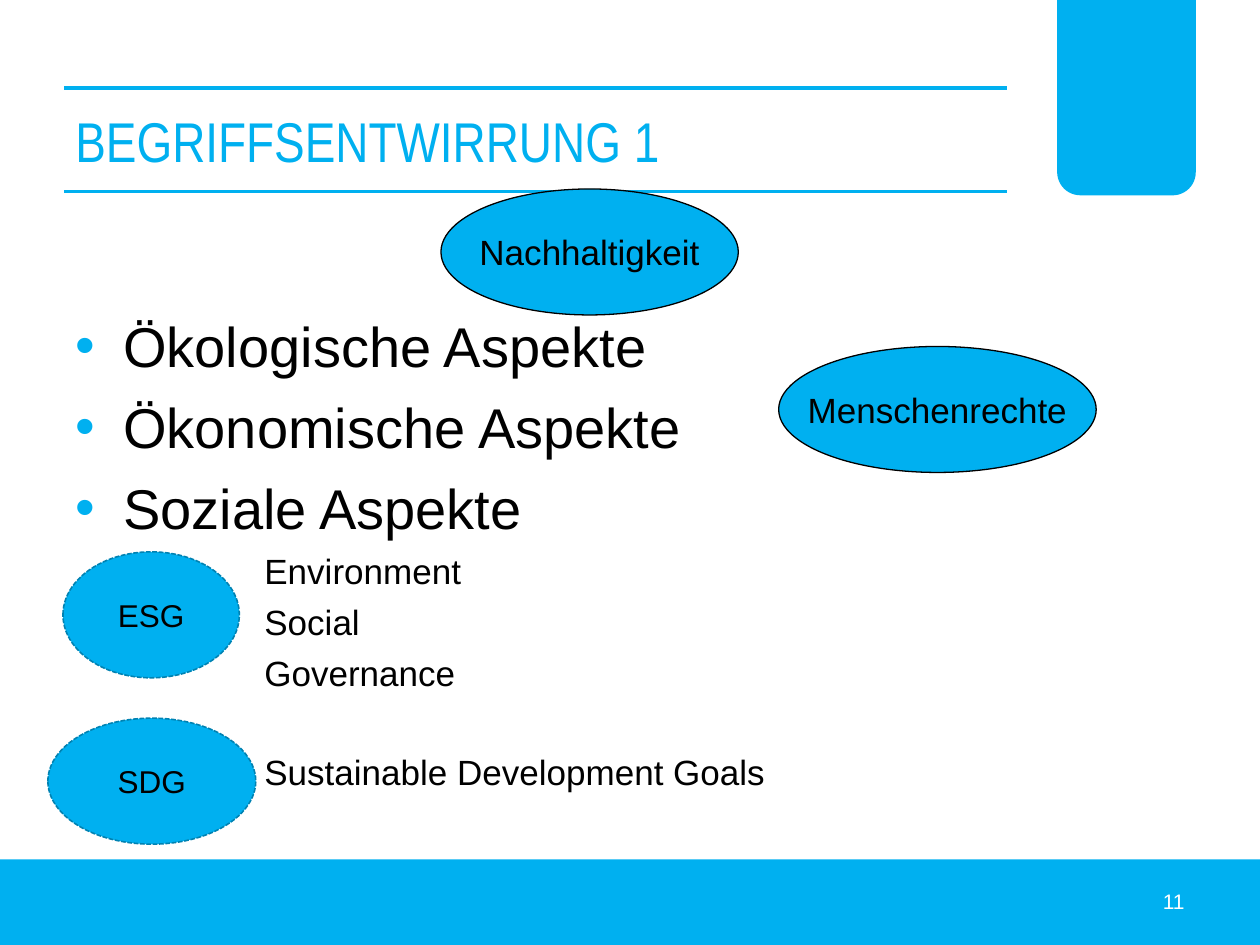
from dataclasses import dataclass

from lxml.etree import SubElement
from pptx import Presentation
from pptx.dml.color import RGBColor
from pptx.enum.dml import MSO_LINE_DASH_STYLE as Dash
from pptx.enum.shapes import MSO_CONNECTOR as Connector, MSO_SHAPE as Shape
from pptx.enum.text import MSO_ANCHOR as Anchor, PP_ALIGN as Align
from pptx.oxml.ns import qn
from pptx.util import Inches, Pt

COLORS = {"accent": "00B0F0", "edge": "0082B2", "text": "000000", "paper": "FFFFFF"}


@dataclass
class Term:
    label: str
    left: float
    top: float
    width: float
    size: int = 20
    dashed: bool = False


@dataclass
class Entry:
    text: str
    size: int
    before: int
    indent: float
    bullet: bool = False


TERMS = [
    Term("Nachhaltigkeit", 3.5, 1.5, 2.36),
    Term("Menschenrechte", 6.18, 2.75, 2.52),
    Term("SDG", 0.38, 5.7, 1.65, 18, True),
    Term("ESG", 0.5, 4.38, 1.4, 18, True),
]
ENTRIES = [
    Entry("Ökologische Aspekte", 32, 0, 0.38, True),
    Entry("Ökonomische Aspekte", 32, 8, 0.38, True),
    Entry("Soziale Aspekte", 32, 8, 0.38, True),
    Entry("Environment", 20, 5, 1.5),
    Entry("Social", 20, 5, 1.5),
    Entry("Governance", 20, 5, 1.5),
    Entry("Sustainable Development Goals", 20, 33, 1.5),
]


def rgb(name: str) -> RGBColor:
    return RGBColor.from_string(COLORS[name])


def style(paragraph, size: int, color: str = "text", face: str = "Arial") -> None:
    for run in paragraph.runs:
        run.font.size = Pt(size)
        run.font.name = face
        run.font.color.rgb = rgb(color)


def add_block(slide, kind: Shape, left: float, top: float, width: float, height: float):
    block = slide.shapes.add_shape(kind, Inches(left), Inches(top), Inches(width), Inches(height))
    block.shadow.inherit = False
    block.fill.solid()
    block.fill.fore_color.rgb = rgb("accent")
    block.line.fill.background()
    return block


def add_text(slide, left: float, top: float, width: float, height: float, wrap: bool = True):
    box = slide.shapes.add_textbox(Inches(left), Inches(top), Inches(width), Inches(height))
    box.text_frame.word_wrap = wrap
    return box.text_frame


def add_rule(slide, y: float) -> None:
    rule = slide.shapes.add_connector(
        Connector.STRAIGHT, Inches(0.51), Inches(y), Inches(7.99), Inches(y))
    rule.line.color.rgb = rgb("accent")
    rule.line.width = Pt(2.25)
    SubElement(rule._element.spPr, qn("a:effectLst"))


def add_term(slide, term: Term) -> None:
    oval = add_block(slide, Shape.OVAL, term.left, term.top, term.width, 1)
    oval.line.color.rgb = rgb("edge" if term.dashed else "text")
    oval.line.width = Pt(0.9 if term.dashed else 0.75)
    if term.dashed:
        oval.line.dash_style = Dash.SQUARE_DOT
    frame = oval.text_frame
    frame.text = term.label
    frame.word_wrap = term.dashed
    frame.vertical_anchor = Anchor.MIDDLE
    frame.paragraphs[0].alignment = Align.CENTER
    style(frame.paragraphs[0], term.size)


def fill_entry(paragraph, entry: Entry) -> None:
    paragraph.text = entry.text
    paragraph.space_before = Pt(entry.before)
    properties = paragraph._p.get_or_add_pPr()
    properties.set("marL", str(Inches(entry.indent)))
    properties.set("indent", str(-Inches(entry.indent) if entry.bullet else 0))
    if entry.bullet:
        bullet_color = SubElement(properties, qn("a:buClr"))
        SubElement(bullet_color, qn("a:srgbClr"), val=COLORS["accent"])
        SubElement(properties, qn("a:buFont"), typeface="Arial")
        SubElement(properties, qn("a:buChar"), char="•")
    style(paragraph, entry.size)


def main() -> None:
    """Build the slide on sustainability terms and save it."""
    deck = Presentation()
    deck.slide_width, deck.slide_height = Inches(10), Inches(7.5)
    slide = deck.slides.add_slide(deck.slide_layouts[6])

    add_block(slide, Shape.RECTANGLE, 0, 6.82, 10, 0.68)
    tab = add_block(slide, Shape.ROUND_2_SAME_RECTANGLE, 8.39, 0, 1.1, 1.55)
    tab.rotation = 180
    for y in (0.7, 1.52):
        add_rule(slide, y)

    title = add_text(slide, 0.5, 0.68, 7.89, 0.87, wrap=False)
    title.text = "BEGRIFFSENTWIRRUNG 1"
    title.vertical_anchor = Anchor.MIDDLE
    title.paragraphs[0].alignment = Align.LEFT
    style(title.paragraphs[0], 32, "accent", "Arial Narrow")

    body = add_text(slide, 0.5, 2.42, 9, 4.28)
    for index, entry in enumerate(ENTRIES):
        fill_entry(body.add_paragraph() if index else body.paragraphs[0], entry)

    for term in TERMS:
        add_term(slide, term)

    number = add_text(slide, 7.17, 6.95, 2.33, 0.4)
    number.text = "11"
    number.vertical_anchor = Anchor.MIDDLE
    number.paragraphs[0].alignment = Align.RIGHT
    style(number.paragraphs[0], 12, "paper")

    deck.save("out.pptx")


if __name__ == "__main__":
    main()
